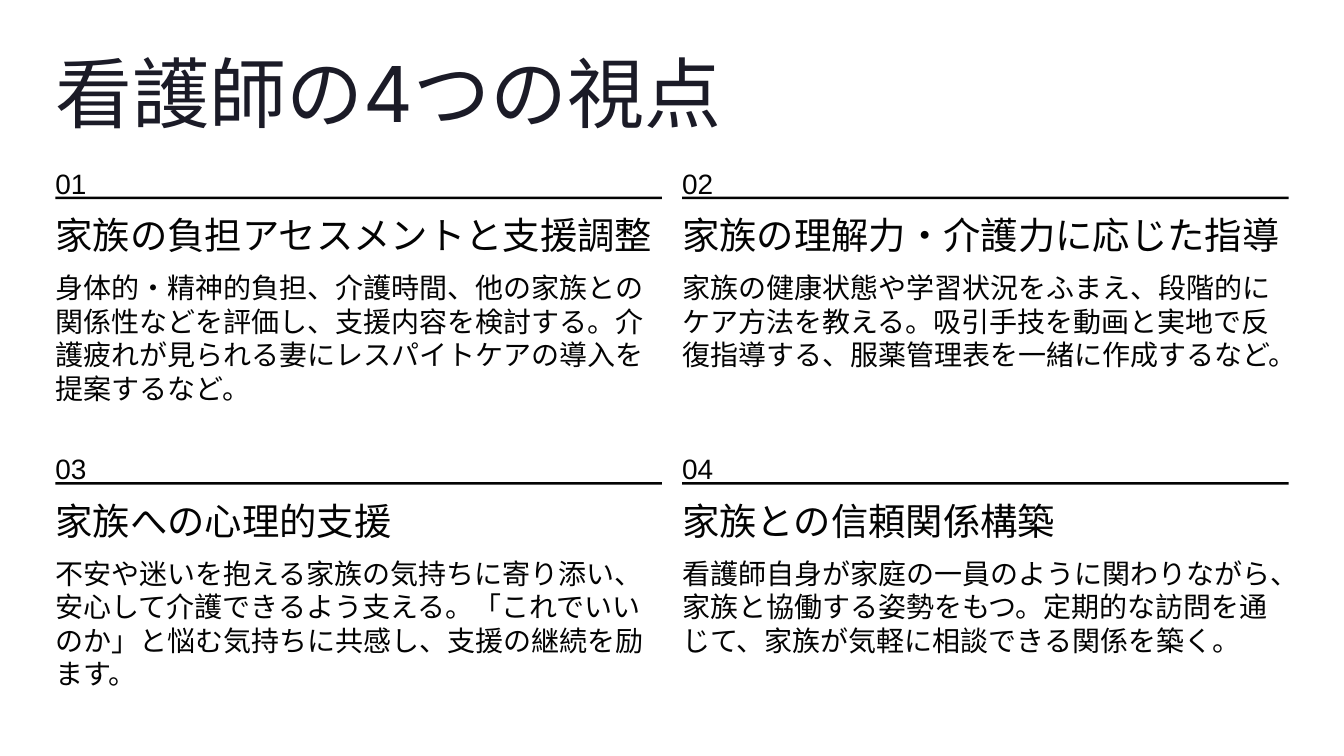
from pptx import Presentation
from pptx.dml.color import RGBColor
from pptx.enum.shapes import MSO_SHAPE
from pptx.enum.text import MSO_ANCHOR, MSO_AUTO_SIZE, PP_ALIGN
from pptx.util import Inches, Pt

RECTANGLE = MSO_SHAPE.RECTANGLE
TOP = MSO_ANCHOR.TOP
NO_FIT = MSO_AUTO_SIZE.NONE
LEFT = PP_ALIGN.LEFT

COLORS = {"title": "1B1B27", "ink": "030303"}
MARGIN = 0.66
COLUMN_WIDTH, COLUMN_STEP = 7.22, 7.46
FIRST_ROW, ROW_STEP = 1.98, 3.4
COLUMNS = 2
TITLE_WIDTH = COLUMN_STEP + COLUMN_WIDTH

VIEWPOINTS = [
    ("家族の負担アセスメントと支援調整", 4.72,
     "身体的・精神的負担、介護時間、他の家族との関係性などを評価し、支援内容を検討する。"
     "介護疲れが見られる妻にレスパイトケアの導入を提案するなど。"),
    ("家族の理解力・介護力に応じた指導", 4.73,
     "家族の健康状態や学習状況をふまえ、段階的にケア方法を教える。"
     "吸引手技を動画と実地で反復指導する、服薬管理表を一緒に作成するなど。"),
    ("家族への心理的支援", 2.95,
     "不安や迷いを抱える家族の気持ちに寄り添い、安心して介護できるよう支える。"
     "「これでいいのか」と悩む気持ちに共感し、支援の継続を励ます。"),
    ("家族との信頼関係構築", 2.95,
     "看護師自身が家庭の一員のように関わりながら、家族と協働する姿勢をもつ。"
     "定期的な訪問を通じて、家族が気軽に相談できる関係を築く。"),
]


def write(frame, text, size, font, color="ink", wrap=False):
    """Fill a text frame with one left-aligned run and no insets."""
    frame.margin_left = frame.margin_right = 0
    frame.margin_top = frame.margin_bottom = 0
    frame.auto_size = NO_FIT
    frame.word_wrap = wrap
    frame.vertical_anchor = TOP
    paragraph = frame.paragraphs[0]
    paragraph.alignment = LEFT
    run = paragraph.add_run()
    run.text = text
    run.font.size = Pt(size)
    run.font.name = font
    run.font.color.rgb = RGBColor.from_string(COLORS[color])


def add_title(slide, text):
    """Place the slide title in its placeholder across both columns."""
    title = slide.shapes.title
    title.left, title.top = Inches(MARGIN), Inches(0.54)
    title.width, title.height = Inches(TITLE_WIDTH), Inches(0.74)
    write(title.text_frame, text, 66, "Inter", "title", True)


def add_label(slide, box, text, size, font, wrap=False):
    """Add a text box at the given left, top, width and height."""
    label = slide.shapes.add_textbox(*map(Inches, box))
    write(label.text_frame, text, size, font, wrap=wrap)


def add_rule(slide, left, top):
    """Add the thin bar that spans a column."""
    rule = slide.shapes.add_shape(
        RECTANGLE, *map(Inches, (left, top, COLUMN_WIDTH, 0.03)))
    rule.shadow.inherit = False
    rule.fill.solid()
    rule.fill.fore_color.rgb = RGBColor.from_string(COLORS["ink"])
    rule.line.fill.background()


def add_viewpoint(slide, index, heading, heading_width, description):
    """Add one numbered viewpoint in its grid cell."""
    row, column = divmod(index, COLUMNS)
    left = MARGIN + column * COLUMN_STEP
    top = FIRST_ROW + row * ROW_STEP
    add_label(slide, (left, top, 0.24, 0.3), f"{index + 1:02}", 24, "Arial")
    add_rule(slide, left, top + 0.36)
    add_label(slide, (left, top + 0.55, heading_width, 0.37), heading, 32, "Inter")
    add_label(slide, (left, top + 1.24, COLUMN_WIDTH, 1.13), description, 24, "Karla", True)


def main():
    """Build and save the slide."""
    deck = Presentation()
    deck.slide_width, deck.slide_height = Inches(16), Inches(9)
    slide = deck.slides.add_slide(deck.slide_layouts.get_by_name("Title Only"))
    add_title(slide, "看護師の4つの視点")
    for index, viewpoint in enumerate(VIEWPOINTS):
        add_viewpoint(slide, index, *viewpoint)
    deck.save("out.pptx")


if __name__ == "__main__":
    main()
